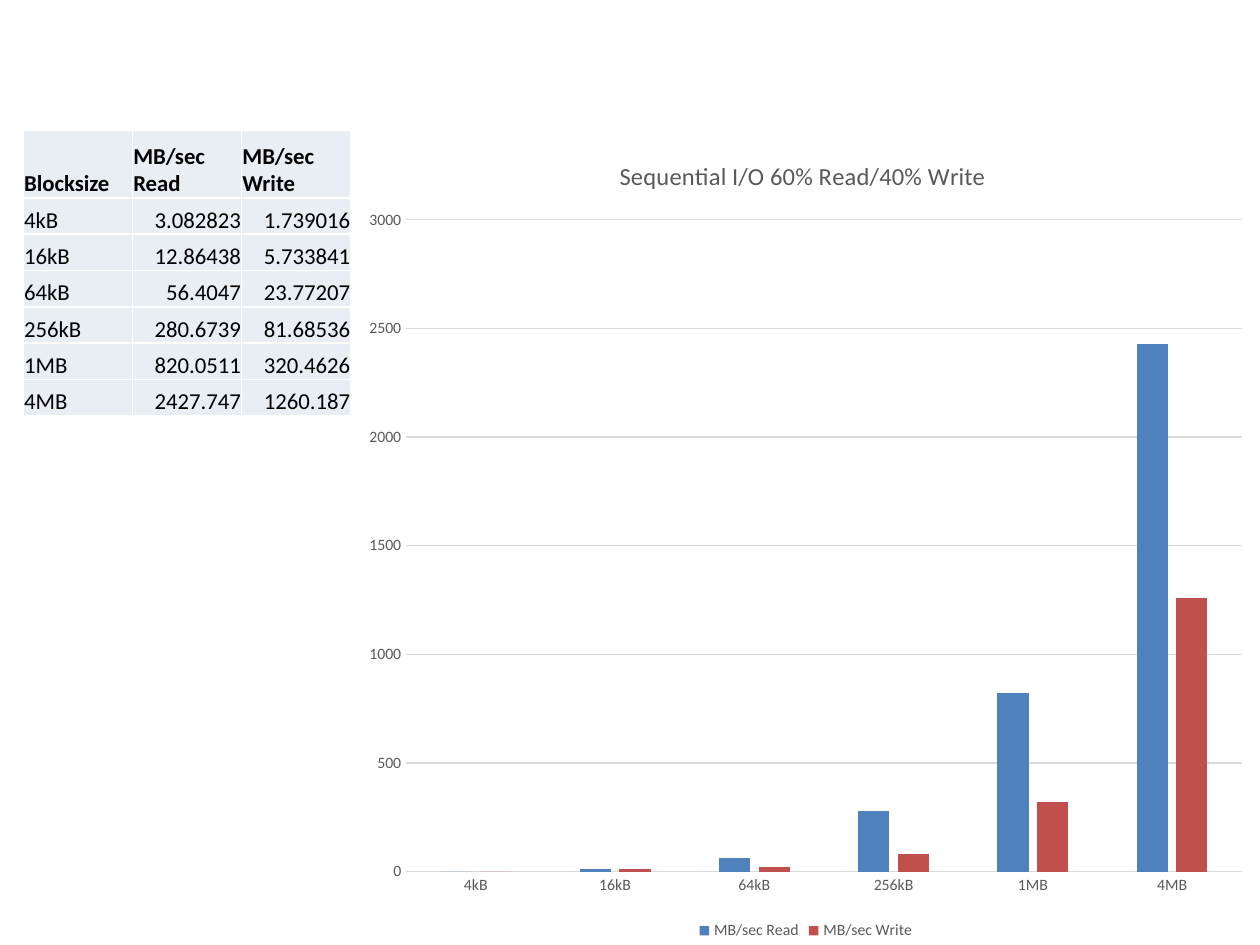
from dataclasses import dataclass

from lxml import etree
from pptx import Presentation
from pptx import util as u
from pptx.chart.data import CategoryChartData
from pptx.dml.color import RGBColor
from pptx.enum import chart as ch
from pptx.enum import text
from pptx.oxml import parse_xml
from pptx.oxml.ns import nsdecls, qn


@dataclass(frozen=True)
class Theme:
    font: str = "Calibri"
    ink: str = "000000"
    muted: str = "595959"
    grid: str = "D9D9D9"
    cell: str = "E9EDF4"
    border: str = "FFFFFF"
    series: tuple = ("4F81BD", "C0504D")
    table_size: float = 13
    title_size: float = 14
    label_size: float = 9


HEADERS = ("Blocksize", "MB/sec Read", "MB/sec Write")
RESULTS = (
    ("4kB", 3.082823, 1.739016),
    ("16kB", 12.86438, 5.733841),
    ("64kB", 56.4047, 23.77207),
    ("256kB", 280.6739, 81.68536),
    ("1MB", 820.0511, 320.4626),
    ("4MB", 2427.747, 1260.187),
)


def apply(target, values):
    for name, value in values.items():
        setattr(target, name, value)


def color(code):
    return RGBColor.from_string(code)


def set_layout(element, before, **factors):
    for old in element.findall(qn("c:layout")):
        element.remove(old)
    layout = parse_xml(f"<c:layout {nsdecls('c')}><c:manualLayout/></c:layout>")
    if "w" in factors:
        etree.SubElement(layout[0], qn("c:layoutTarget")).set("val", "inner")
    for mode in ("xMode", "yMode"):
        etree.SubElement(layout[0], qn(f"c:{mode}")).set("val", "edge")
    for name, value in factors.items():
        etree.SubElement(layout[0], qn(f"c:{name}")).set("val", str(value))
    element.find(qn(before)).addprevious(layout)


class SlideBuilder:
    def __init__(self, slide, theme):
        self.slide = slide
        self.theme = theme

    def style_font(self, font, size, code, bold=False):
        apply(font, {"name": self.theme.font, "size": u.Pt(size), "bold": bold})
        font.color.rgb = color(code)

    def cell(self, cell, content, bold):
        theme = self.theme
        apply(cell, {
            "margin_left": u.Pt(0.5), "margin_right": u.Pt(0.5),
            "margin_top": u.Pt(0.5), "margin_bottom": 0,
            "vertical_anchor": text.MSO_ANCHOR.BOTTOM,
        })
        cell.fill.solid()
        cell.fill.fore_color.rgb = color(theme.cell)
        para = cell.text_frame.paragraphs[0]
        if isinstance(content, float):
            para.alignment = text.PP_ALIGN.RIGHT
        span = para.add_run()
        span.text = str(content)
        self.style_font(span.font, theme.table_size, theme.ink, bold)
        properties = cell._tc.get_or_add_tcPr()
        for index, side in enumerate("LRTB"):
            properties.insert(index, parse_xml(
                f'<a:ln{side} {nsdecls("a")} w="{u.Pt(1)}"><a:solidFill>'
                f'<a:srgbClr val="{theme.border}"/></a:solidFill></a:ln{side}>'))

    def table(self, left, top, column_width, header_height, row_height, rows):
        heights = [header_height] + [row_height] * (len(rows) - 1)
        columns = len(rows[0])
        table = self.slide.shapes.add_table(
            len(rows), columns, u.Pt(left), u.Pt(top),
            u.Pt(column_width * columns), u.Pt(sum(heights))).table
        for column in table.columns:
            column.width = u.Pt(column_width)
        for index, (row, height) in enumerate(zip(rows, heights)):
            table.rows[index].height = u.Pt(height)
            for position, content in enumerate(row):
                self.cell(table.cell(index, position), content, index == 0)

    def grid_line(self, line):
        line.color.rgb = color(self.theme.grid)
        line.width = u.Pt(0.75)

    def column_chart(self, left, top, width, height, title, headers, results):
        theme = self.theme
        data = CategoryChartData()
        data.categories = [row[0] for row in results]
        for index, name in enumerate(headers[1:], 1):
            data.add_series(name, [int(round(row[index], -1)) for row in results])
        chart = self.slide.shapes.add_chart(
            ch.XL_CHART_TYPE.COLUMN_CLUSTERED, u.Pt(left), u.Pt(top),
            u.Pt(width), u.Pt(height), data).chart
        self.style_font(chart.font, 10, theme.ink)

        chart.has_title = True
        span = chart.chart_title.text_frame.paragraphs[0].add_run()
        span.text = title
        self.style_font(span.font, theme.title_size, theme.muted)
        chart.chart_title.include_in_layout = False
        set_layout(chart.chart_title._element, "c:overlay", x=0.29, y=0.03)

        chart.has_legend = True
        apply(chart.legend, {"position": ch.XL_LEGEND_POSITION.BOTTOM,
                             "include_in_layout": False})
        self.style_font(chart.legend.font, theme.label_size, theme.muted)

        plot = chart.plots[0]
        apply(plot, {"gap_width": 219, "overlap": -27,
                     "vary_by_categories": False})
        for series, code in zip(plot.series, theme.series):
            series.format.fill.solid()
            series.format.fill.fore_color.rgb = color(code)

        for axis in (chart.category_axis, chart.value_axis):
            apply(axis, {"major_tick_mark": ch.XL_TICK_MARK.NONE,
                         "minor_tick_mark": ch.XL_TICK_MARK.NONE})
            self.style_font(axis.tick_labels.font, theme.label_size, theme.muted)
        self.grid_line(chart.category_axis.format.line)
        apply(chart.value_axis, {"minimum_scale": 0, "maximum_scale": 3000,
                                 "major_unit": 500})
        chart.value_axis.format.line.fill.background()
        self.grid_line(chart.value_axis.major_gridlines.format.line)
        apply(chart.value_axis.tick_labels, {"number_format": "General",
                                             "number_format_is_linked": False})
        plot_area = chart._chartSpace.chart.plotArea
        set_layout(plot_area, "c:barChart", x=0.06, y=0.11, w=0.92, h=0.8)


def main():
    deck = Presentation()
    apply(deck, {"slide_width": u.Pt(720), "slide_height": u.Pt(540)})
    page = SlideBuilder(deck.slides.add_slide(deck.slide_layouts[6]), Theme())
    page.table(13.3, 74.4, 62.4, 38.7, 20.75, (HEADERS, *RESULTS))
    page.column_chart(201, 74.4, 519, 465.6,
                      "Sequential I/O 60% Read/40% Write", HEADERS, RESULTS)
    deck.save("out.pptx")


if __name__ == "__main__":
    main()
